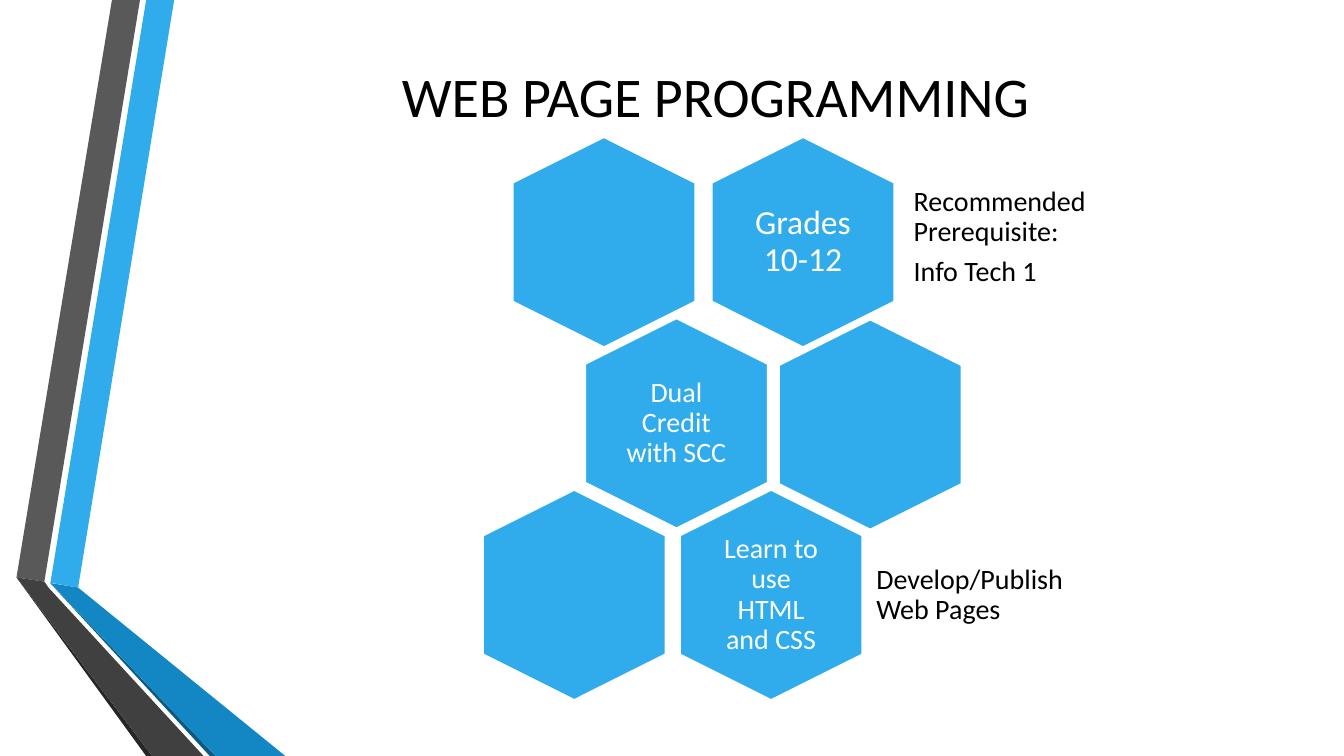
import pptx
import pptx.dml.color
import pptx.enum.shapes
import pptx.enum.text
import pptx.util

Pt = pptx.util.Pt
RGBColor = pptx.dml.color.RGBColor
ALIGN = pptx.enum.text.PP_ALIGN

WHITE = RGBColor(0xFF, 0xFF, 0xFF)
BLACK = RGBColor(0x00, 0x00, 0x00)
BLUE = RGBColor(0x30, 0xAC, 0xEC)
MID_BLUE = RGBColor(0x12, 0x87, 0xC3)
DEEP_BLUE = RGBColor(0x0C, 0x5A, 0x82)
GRAY = RGBColor(0x59, 0x59, 0x59)
DARK_GRAY = RGBColor(0x40, 0x40, 0x40)
NEAR_BLACK = RGBColor(0x26, 0x26, 0x26)

W, H = 960, 540
HEX_LENGTH, HEX_WIDTH = 150, 130.3
LABEL_W, LABEL_H = 89.3, 103
NOTE_W, NOTE_H = 168, 90


class Deck:
    """Holds the slide and its style."""

    font = "Calibri"

    def __init__(self, prs):
        self.s = prs.slides.add_slide(prs.slide_layouts[6])

    def ribbon(self, points, color):
        points = [(Pt(x), Pt(y)) for x, y in points]
        fb = self.s.shapes.build_freeform(*points[0], scale=1.0)
        fb.add_line_segments(points[1:], close=True)
        sp = fb.convert_to_shape()
        sp.shadow.inherit = False
        sp.fill.solid()
        sp.fill.fore_color.rgb = color
        sp.line.fill.background()

    def hexagon(self, cx, cy):
        sp = self.s.shapes.add_shape(
            pptx.enum.shapes.MSO_SHAPE.HEXAGON,
            Pt(cx - HEX_LENGTH / 2), Pt(cy - HEX_WIDTH / 2),
            Pt(HEX_LENGTH), Pt(HEX_WIDTH))
        sp.rotation = 90
        sp.adjustments[0] = 0.25
        sp.shadow.inherit = False
        sp.fill.solid()
        sp.fill.fore_color.rgb = BLUE
        sp.line.color.rgb = WHITE
        sp.line.width = Pt(1.25)

    def text(self, x, y, w, h, lines, size, color=BLACK, align=ALIGN.LEFT,
             spacing=0.9, inset=6):
        tf = self.s.shapes.add_textbox(Pt(x), Pt(y), Pt(w), Pt(h)).text_frame
        tf.word_wrap = True
        tf.vertical_anchor = pptx.enum.text.MSO_ANCHOR.MIDDLE
        tf.margin_left = tf.margin_right = Pt(inset)
        tf.margin_top = tf.margin_bottom = Pt(inset)
        tf.text = "\n".join(lines)
        for p in tf.paragraphs:
            p.alignment = align
            p.line_spacing = spacing
            p.space_after = Pt(0.35 * size)
            p.font.name = self.font
            p.font.size = Pt(size)
            p.font.color.rgb = color

    def label(self, cx, cy, line, size):
        self.text(cx - LABEL_W / 2, cy - LABEL_H / 2, LABEL_W, LABEL_H,
                  [line], size, WHITE, ALIGN.CENTER)


def main():
    prs = pptx.Presentation()
    prs.slide_width, prs.slide_height = Pt(W), Pt(H)
    deck = Deck(prs)

    # Folded ribbons on the left edge
    ribbons = [
        ([(36, 416.3), (55.8, 419.7), (124.4, 0), (104.4, 0)], BLUE),
        ([(100, 0), (80, 0), (11.8, 412.5), (31.7, 415.5)], GRAY),
        ([(11.8, 412.5), (104.4, H), (108.7, H)], NEAR_BLACK),
        ([(36, 416.7), (149.8, H), (154, H)], DEEP_BLUE),
        ([(36, 416.5), (154, H), (203.8, H), (55.8, 419.7)], MID_BLUE),
        ([(145.4, H), (34.6, 419.7), (31.7, 415.5), (11.8, 412.5),
          (108.7, H)], DARK_GRAY),
    ]
    for points, color in ribbons:
        deck.ribbon(points, color)

    # Title
    deck.text(116.6, 19.4, 789, 96.5, ["WEB PAGE PROGRAMMING"], 40,
              align=ALIGN.CENTER, spacing=1.0)

    # Honeycomb: centre, label and label size
    cells = [
        (573.6, 173, "Grades 10-12", 24),
        (431.4, 173, None, None),
        (483.2, 302.4, "Dual Credit with SCC", 20),
        (621.6, 303.3, None, None),
        (550.8, 425, "Learn to use HTML and CSS", 20),
        (410.2, 425, None, None),
    ]
    for cx, cy, line, size in cells:
        deck.hexagon(cx, cy)
        if line:
            deck.label(cx, cy, line, size)

    # Notes beside the honeycomb
    deck.text(646.6, 124.6, NOTE_W, NOTE_H,
              ["Recommended Prerequisite:", "Info Tech 1"], 20)
    deck.text(619.9, 380.2, NOTE_W, NOTE_H, ["Develop/Publish Web Pages"], 20)

    prs.save("out.pptx")


if __name__ == "__main__":
    main()
